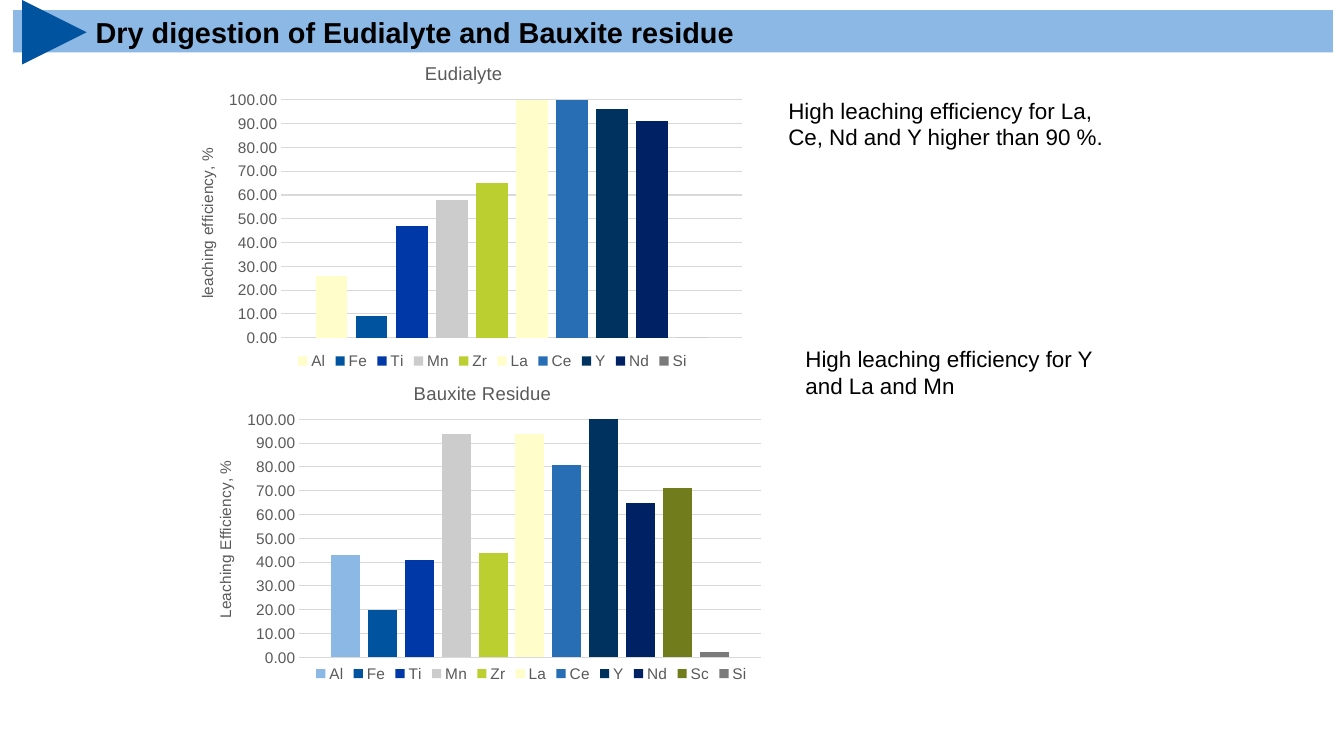
from lxml import etree
from pptx import Presentation
from pptx.chart.data import CategoryChartData
from pptx.dml.color import RGBColor
from pptx.enum.chart import XL_CHART_TYPE, XL_LEGEND_POSITION, XL_TICK_MARK
from pptx.enum.shapes import MSO_SHAPE
from pptx.enum.text import MSO_ANCHOR
from pptx.oxml.ns import qn
from pptx.util import Inches, Pt

COLUMNS = XL_CHART_TYPE.COLUMN_CLUSTERED
BOTTOM = XL_LEGEND_POSITION.BOTTOM
NO_TICKS = XL_TICK_MARK.NONE

FONT = "Arial"
COLORS = {"band": "8BB8E5", "arrow": "00539F", "text": "000000",
          "label": "595959", "grid": "D9D9D9"}
ELEMENT_COLORS = {"Al": "8BB8E5", "Fe": "00539F", "Ti": "0038A8", "Mn": "CCCCCC",
                  "Zr": "BCCF30", "La": "FFFDC9", "Ce": "286EB4", "Y": "00325F",
                  "Nd": "002265", "Sc": "717C1D", "Si": "7A7A7A"}

TITLE = "Dry digestion of Eudialyte and Bauxite residue"
CHART_SIZE = (5.79, 3.42)
PLOT_PLACE = {"x": 0.19, "y": 0.17, "w": 0.79, "h": 0.69}

# Places inside a chart are fractions of its width and height.
RESIDUES = [
    {"title": "Eudialyte", "axis": "leaching efficiency, %",
     "at": (1.69, 0.41),
     "values": {"Al": 26, "Fe": 9, "Ti": 47, "Mn": 58, "Zr": 65, "La": 100,
                "Ce": 100, "Y": 96, "Nd": 91, "Si": 0},
     "recolored": {"Al": "FFFDC9"},
     "title_place": {"x": 0.43, "y": 0.05},
     "axis_place": {"x": 0.04, "y": 0.3},
     "legend_place": {"x": 0.21, "y": 0.89},
     "finding": "High leaching efficiency for La, Ce, Nd and Y higher than 90 %.",
     "finding_box": (7.72, 0.91, 3.55, 0.64)},
    {"title": "Bauxite Residue", "axis": "Leaching Efficiency, %",
     "at": (1.87, 3.58),
     "values": {"Al": 43, "Fe": 20, "Ti": 41, "Mn": 94, "Zr": 44, "La": 94,
                "Ce": 81, "Y": 101, "Nd": 65, "Sc": 71, "Si": 2},
     "recolored": {},
     "title_place": {"x": 0.38, "y": 0.05},
     "axis_place": {"x": 0.04, "y": 0.28},
     "legend_place": {"x": 0.21, "y": 0.87},
     "finding": "High leaching efficiency for Y and La and Mn",
     "finding_box": (7.89, 3.38, 3.33, 0.64)},
]


def style_font(font, size, color, bold=False):
    font.name, font.size, font.bold = FONT, Pt(size), bold
    font.color.rgb = RGBColor.from_string(color)


def write(frame, text, size=16, color=COLORS["text"], bold=False):
    frame.text = text
    style_font(frame.paragraphs[0].runs[0].font, size, color, bold)


def add_text(slide, text, box, anchor=MSO_ANCHOR.TOP, **text_format):
    frame = slide.shapes.add_textbox(*map(Inches, box)).text_frame
    frame.word_wrap = True
    frame.vertical_anchor = anchor
    write(frame, text, **text_format)


def paint(shape, color):
    shape.shadow.inherit = False
    shape.fill.solid()
    shape.fill.fore_color.rgb = RGBColor.from_string(color)
    shape.line.fill.background()


def place(element, position, fractions, inner=False):
    """Give a chart part a manual layout, as the child at the given position."""
    for old in element.findall(qn("c:layout")):
        element.remove(old)
    layout = etree.Element(qn("c:layout"))
    element.insert(position, layout)
    manual = etree.SubElement(layout, qn("c:manualLayout"))
    settings = [("layoutTarget", "inner")] if inner else []
    settings += [("xMode", "edge"), ("yMode", "edge"), *fractions.items()]
    for tag, value in settings:
        etree.SubElement(manual, qn(f"c:{tag}")).set("val", str(value))


def add_efficiency_chart(slide, residue):
    data = CategoryChartData(number_format="0.00")
    data.categories = ["1"]
    for element, value in residue["values"].items():
        data.add_series(element, [value])
    box = map(Inches, residue["at"] + CHART_SIZE)
    chart = slide.shapes.add_chart(COLUMNS, *box, data).chart
    style_font(chart.font, 11, COLORS["label"])

    chart.has_title = True
    write(chart.chart_title.text_frame, residue["title"], size=13.2,
          color=COLORS["label"])
    place(chart.chart_title._element, 1, residue["title_place"])

    columns = chart.plots[0]
    columns.gap_width, columns.overlap = 219, -27
    columns.vary_by_categories = False
    colors = ELEMENT_COLORS | residue["recolored"]
    for series in columns.series:
        series.invert_if_negative = False
        series.format.fill.solid()
        series.format.fill.fore_color.rgb = RGBColor.from_string(colors[series.name])
    place(chart._chartSpace.chart.plotArea, 0, PLOT_PLACE, inner=True)

    chart.category_axis.visible = False
    axis = chart.value_axis
    axis.minimum_scale, axis.maximum_scale, axis.major_unit = 0, 100, 10
    axis.major_tick_mark = axis.minor_tick_mark = NO_TICKS
    axis.tick_labels.number_format = "0.00"
    axis.tick_labels.number_format_is_linked = False
    style_font(axis.tick_labels.font, 11, COLORS["label"])
    axis.format.line.fill.background()
    grid = axis.major_gridlines.format.line
    grid.width = Pt(0.75)
    grid.color.rgb = RGBColor.from_string(COLORS["grid"])
    axis_frame = axis.axis_title.text_frame
    write(axis_frame, residue["axis"], size=11, color=COLORS["label"])
    axis_frame._txBody.bodyPr.set("rot", "-5400000")
    place(axis.axis_title._element, 1, residue["axis_place"])

    chart.has_legend = True
    chart.legend.position = BOTTOM
    chart.legend.include_in_layout = False
    style_font(chart.legend.font, 11, COLORS["label"])
    place(chart.legend._element, 1, residue["legend_place"])


def add_header(slide):
    band = slide.shapes.add_shape(MSO_SHAPE.RECTANGLE, Inches(0.13), Inches(0.1),
                                  Inches(13.09), Inches(0.42))
    paint(band, COLORS["band"])
    outline = slide.shapes.build_freeform(Inches(0.22), 0)
    outline.add_line_segments([(Inches(0.22), Inches(0.64)),
                               (Inches(0.86), Inches(0.32))], close=True)
    paint(outline.convert_to_shape(), COLORS["arrow"])
    add_text(slide, TITLE, (0.85, 0.12, 10.13, 0.42), anchor=MSO_ANCHOR.BOTTOM,
             size=20.6, bold=True)


def main():
    deck = Presentation()
    deck.slide_width, deck.slide_height = Inches(13.33), Inches(7.5)
    slide = deck.slides.add_slide(deck.slide_layouts[6])
    add_header(slide)
    for residue in RESIDUES:
        add_efficiency_chart(slide, residue)
        add_text(slide, residue["finding"], residue["finding_box"])
    deck.save("out.pptx")


if __name__ == "__main__":
    main()
